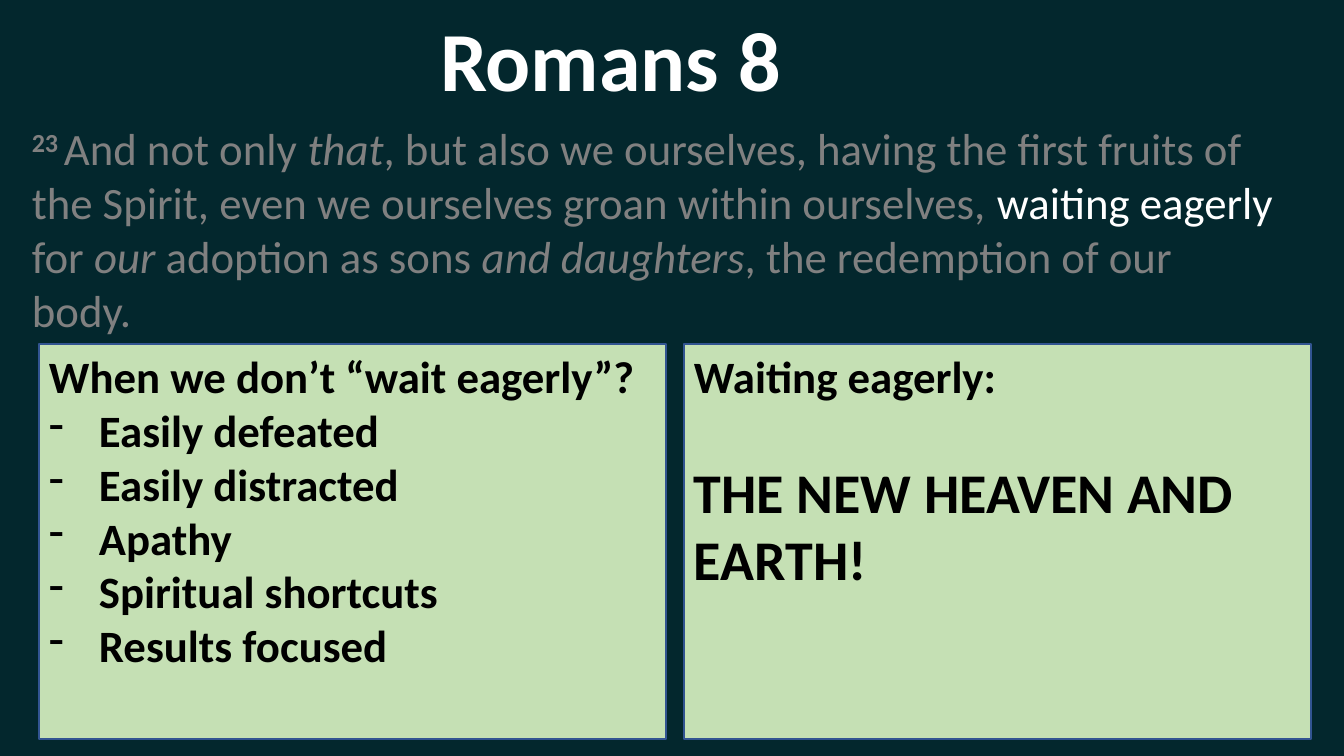
from pptx import Presentation
from pptx.dml.color import RGBColor
from pptx.enum.shapes import MSO_SHAPE
from pptx.enum.text import MSO_ANCHOR, PP_ALIGN
from pptx.oxml.ns import qn
from pptx.util import Inches, Pt
from lxml import etree

RECTANGLE = MSO_SHAPE.RECTANGLE
TOP = MSO_ANCHOR.TOP
LEFT, CENTER = PP_ALIGN.LEFT, PP_ALIGN.CENTER

NIGHT = RGBColor(0x03, 0x27, 0x2D)
WHITE = RGBColor(0xFF, 0xFF, 0xFF)
GRAY = RGBColor(0x80, 0x80, 0x80)
BLACK = RGBColor(0x00, 0x00, 0x00)
GREEN = RGBColor(0xC5, 0xE0, 0xB4)
BLUE = RGBColor(0x32, 0x54, 0x91)

SLIDE_WIDTH, SLIDE_HEIGHT = 1344, 756
SCALE = Inches(40 / 3) / SLIDE_WIDTH


def px(*lengths):
    """Turn pixel lengths into EMU."""
    return [round(length * SCALE) for length in lengths]


def add_run(paragraph, text, size, color, bold=False, italic=False):
    run = paragraph.add_run()
    run.text = text
    run.font.color.rgb = color
    formats = {"name": "Calibri", "size": Pt(size), "bold": bold, "italic": italic}
    for name, value in formats.items():
        setattr(run.font, name, value)
    return run


presentation = Presentation()
presentation.slide_width, presentation.slide_height = px(SLIDE_WIDTH, SLIDE_HEIGHT)
slide = presentation.slides.add_slide(presentation.slide_layouts[6])
slide.background.fill.solid()
slide.background.fill.fore_color.rgb = NIGHT

# Title
title = slide.shapes.add_textbox(*px(261, 3, 699, 112)).text_frame
title.word_wrap = True
title.paragraphs[0].alignment = CENTER
add_run(title.paragraphs[0], "Romans 8", 60, WHITE, bold=True)

# Verse
verse = slide.shapes.add_textbox(*px(22, 116, 1290, 228)).text_frame
verse.word_wrap = True
verse_start = verse.paragraphs[0]
number = add_run(verse_start, "23 ", 32, GRAY, bold=True)
number.font._element.set("baseline", "30000")
for text, color, italic in [
    ("And not only ", GRAY, False),
    ("that", GRAY, True),
    (", but also we ourselves, having the first fruits of the Spirit, "
     "even we ourselves groan within ourselves, ", GRAY, False),
    ("waiting eagerly ", WHITE, False),
    ("for ", GRAY, False),
    ("our", GRAY, True),
    (" adoption as sons ", GRAY, False),
    ("and daughters", GRAY, True),
    (", the redemption of our", GRAY, False),
]:
    add_run(verse_start, text, 32, color, italic=italic)
add_run(verse.add_paragraph(), "body.", 32, GRAY)

# Two green panels
panels = []
for left, heading in [(39, "When we don’t “wait eagerly”?"), (684, "Waiting eagerly:")]:
    panel = slide.shapes.add_shape(RECTANGLE, *px(left, 344, 627, 395))
    panel.shadow.inherit = False
    panel.fill.solid()
    panel.fill.fore_color.rgb = GREEN
    panel.line.color.rgb = BLUE
    panel.line.width = Pt(1)
    frame = panel.text_frame
    frame.word_wrap = True
    frame.vertical_anchor = TOP
    frame.paragraphs[0].alignment = LEFT
    add_run(frame.paragraphs[0], heading, 32, BLACK, bold=True)
    panels.append(frame)
struggles, hope = panels

indent = px(50)[0]
for struggle in ["Easily defeated", "Easily distracted", "Apathy",
                 "Spiritual shortcuts", "Results focused"]:
    paragraph = struggles.add_paragraph()
    paragraph.alignment = LEFT
    add_run(paragraph, struggle, 32, BLACK, bold=True)
    properties = paragraph._p.get_or_add_pPr()
    properties.set("marL", str(indent))
    properties.set("indent", str(-indent))
    etree.SubElement(properties, qn("a:buFontTx"))
    etree.SubElement(properties, qn("a:buChar")).set("char", "-")

promise = hope.add_paragraph()
promise.alignment = LEFT
promise.space_before = Pt(39)
add_run(promise, "THE NEW HEAVEN AND EARTH!", 40, BLACK, bold=True)

presentation.save("out.pptx")
